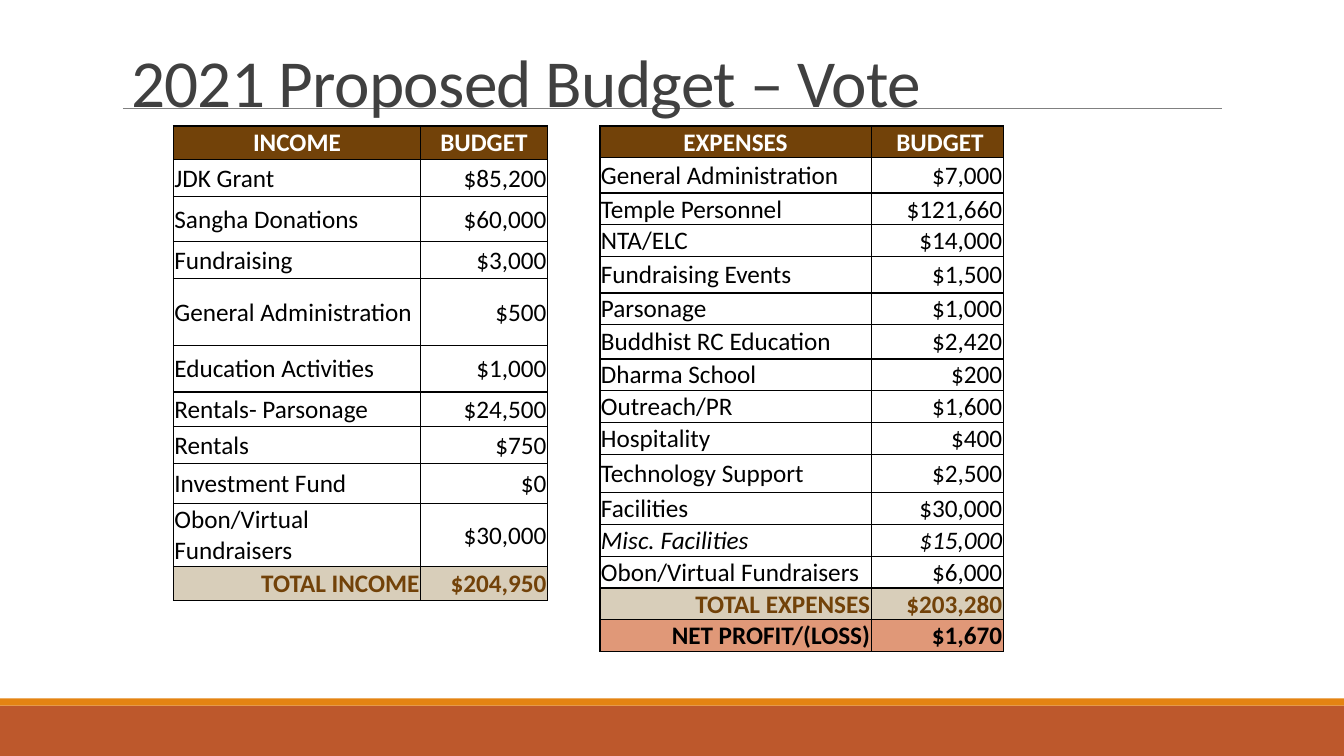
"""Builds the 2021 proposed budget slide with income and expense tables."""
from lxml import etree
from pptx import Presentation
from pptx.dml.color import RGBColor
from pptx.enum.shapes import MSO_CONNECTOR, MSO_SHAPE
from pptx.enum.text import MSO_ANCHOR, MSO_AUTO_SIZE, PP_ALIGN
from pptx.oxml.ns import qn
from pptx.util import Inches, Pt

LEFT, CENTER, RIGHT = PP_ALIGN.LEFT, PP_ALIGN.CENTER, PP_ALIGN.RIGHT
MIDDLE, BOTTOM = MSO_ANCHOR.MIDDLE, MSO_ANCHOR.BOTTOM
RECTANGLE, STRAIGHT = MSO_SHAPE.RECTANGLE, MSO_CONNECTOR.STRAIGHT
NO_AUTOFIT = MSO_AUTO_SIZE.NONE

WIDTH, HEIGHT = 13.33, 7.5
FONT = "Calibri"
TITLE = "2021 Proposed Budget – Vote"
BANDS = [(7, 0.5, "BD582C"), (6.93, 0.07, "E48312")]
TABLE_TOP = 1.25

# kind: fill, text colour, bold, italic, label alignment, amount alignment
STYLES = {
    "head": ("724209", "FFFFFF", True, False, CENTER, CENTER),
    "item": ("FFFFFF", "000000", False, False, LEFT, RIGHT),
    "aside": ("FFFFFF", "000000", False, True, LEFT, RIGHT),
    "total": ("D8CEBA", "724209", True, False, RIGHT, RIGHT),
    "net": ("E09878", "000000", True, False, RIGHT, RIGHT),
}

INCOME = [
    ("INCOME", "BUDGET", 0.33, "head"),
    ("JDK Grant", "$85,200", 0.37, "item"),
    ("Sangha Donations", "$60,000", 0.45, "item"),
    ("Fundraising", "$3,000", 0.36, "item"),
    ("General Administration", "$500", 0.67, "item"),
    ("Education Activities", "$1,000", 0.46, "item"),
    ("Rentals- Parsonage", "$24,500", 0.34, "item"),
    ("Rentals", "$750", 0.37, "item"),
    ("Investment Fund", "$0", 0.4, "item"),
    ("Obon/Virtual Fundraisers", "$30,000", 0.35, "item"),
    ("TOTAL INCOME", "$204,950", 0.34, "total"),
]
EXPENSES = [
    ("EXPENSES", " BUDGET", 0.29, "head"),
    ("General Administration", "$7,000", 0.35, "item"),
    ("Temple Personnel", "$121,660", 0.29, "item"),
    ("NTA/ELC", "$14,000", 0.29, "item"),
    ("Fundraising Events", "$1,500", 0.36, "item"),
    ("Parsonage", "$1,000", 0.29, "item"),
    ("Buddhist RC Education", "$2,420", 0.34, "item"),
    ("Dharma School", "$200", 0.29, "item"),
    ("Outreach/PR", "$1,600", 0.29, "item"),
    ("Hospitality", "$400", 0.29, "item"),
    ("Technology Support", "$2,500", 0.38, "item"),
    ("Facilities", "$30,000", 0.29, "item"),
    ("Misc. Facilities", "$15,000", 0.29, "aside"),
    ("Obon/Virtual Fundraisers", "$6,000", 0.29, "item"),
    ("TOTAL EXPENSES", "$203,280", 0.29, "total"),
    ("NET PROFIT/(LOSS)", "$1,670", 0.29, "net"),
]
TABLES = [(1.72, (2.45, 1.26), INCOME), (5.95, (2.69, 1.31), EXPENSES)]


def color(value):
    return RGBColor.from_string(value)


def write(paragraph, text, size, ink, bold=False, italic=False):
    run = paragraph.add_run()
    run.text = text
    font = run.font
    font.name, font.size, font.bold, font.italic = FONT, Pt(size), bold, italic
    font.color.rgb = color(ink)
    return run


def add_borders(cell):
    properties = cell._tc.get_or_add_tcPr()
    for position, side in enumerate(("lnL", "lnR", "lnT", "lnB")):
        line = etree.Element(qn(f"a:{side}"), w=str(Pt(1)))
        fill = etree.SubElement(line, qn("a:solidFill"))
        etree.SubElement(fill, qn("a:srgbClr"), val="000000")
        properties.insert(position, line)


def fill_cell(cell, text, align, fill, ink, bold, italic):
    cell.margin_left = cell.margin_right = cell.margin_top = Inches(0.01)
    cell.margin_bottom = 0
    cell.vertical_anchor = MIDDLE
    cell.fill.solid()
    cell.fill.fore_color.rgb = color(fill)
    paragraph = cell.text_frame.paragraphs[0]
    paragraph.alignment = align
    write(paragraph, text, 18, ink, bold, italic)
    add_borders(cell)


def add_budget(slide, left, columns, entries):
    total_height = sum(entry[2] for entry in entries)
    budget = slide.shapes.add_table(
        len(entries), len(columns), Inches(left), Inches(TABLE_TOP),
        Inches(sum(columns)), Inches(total_height)).table
    for column, width in zip(budget.columns, columns):
        column.width = Inches(width)
    for row, (label, amount, height, kind) in zip(budget.rows, entries):
        row.height = Inches(height)
        fill, ink, bold, italic, *aligns = STYLES[kind]
        for cell, text, align in zip(row.cells, (label, amount), aligns):
            fill_cell(cell, text, align, fill, ink, bold, italic)


def add_backdrop(slide):
    for top, height, fill in BANDS:
        band = slide.shapes.add_shape(
            RECTANGLE, 0, Inches(top), Inches(WIDTH), Inches(height))
        band.shadow.inherit = False
        band.fill.solid()
        band.fill.fore_color.rgb = color(fill)
        band.line.fill.background()
    rule = slide.shapes.add_connector(
        STRAIGHT, Inches(1.22), Inches(1.08), Inches(12.12), Inches(1.08))
    rule.line.color.rgb = color("808080")
    rule.line.width = Pt(0.5)
    etree.SubElement(rule.element.spPr, qn("a:effectLst"))


def add_title(slide):
    title = slide.shapes.title
    title.left, title.top = Inches(1.2), Inches(0.31)
    title.width, title.height = Inches(11), Inches(0.94)
    frame = title.text_frame
    frame.auto_size = NO_AUTOFIT
    frame.word_wrap = True
    frame.vertical_anchor = BOTTOM
    heading = frame.paragraphs[0]
    heading.alignment = LEFT
    heading.line_spacing = 0.85
    run = write(heading, TITLE, 48, "404040")
    run.font._element.set("spc", "-50")
    title.element.getparent().append(title.element)


def main():
    deck = Presentation()
    deck.slide_width, deck.slide_height = Inches(WIDTH), Inches(HEIGHT)
    slide = deck.slides.add_slide(deck.slide_layouts[5])
    add_backdrop(slide)
    add_title(slide)
    for left, columns, entries in TABLES:
        add_budget(slide, left, columns, entries)
    deck.save("out.pptx")


if __name__ == "__main__":
    main()
